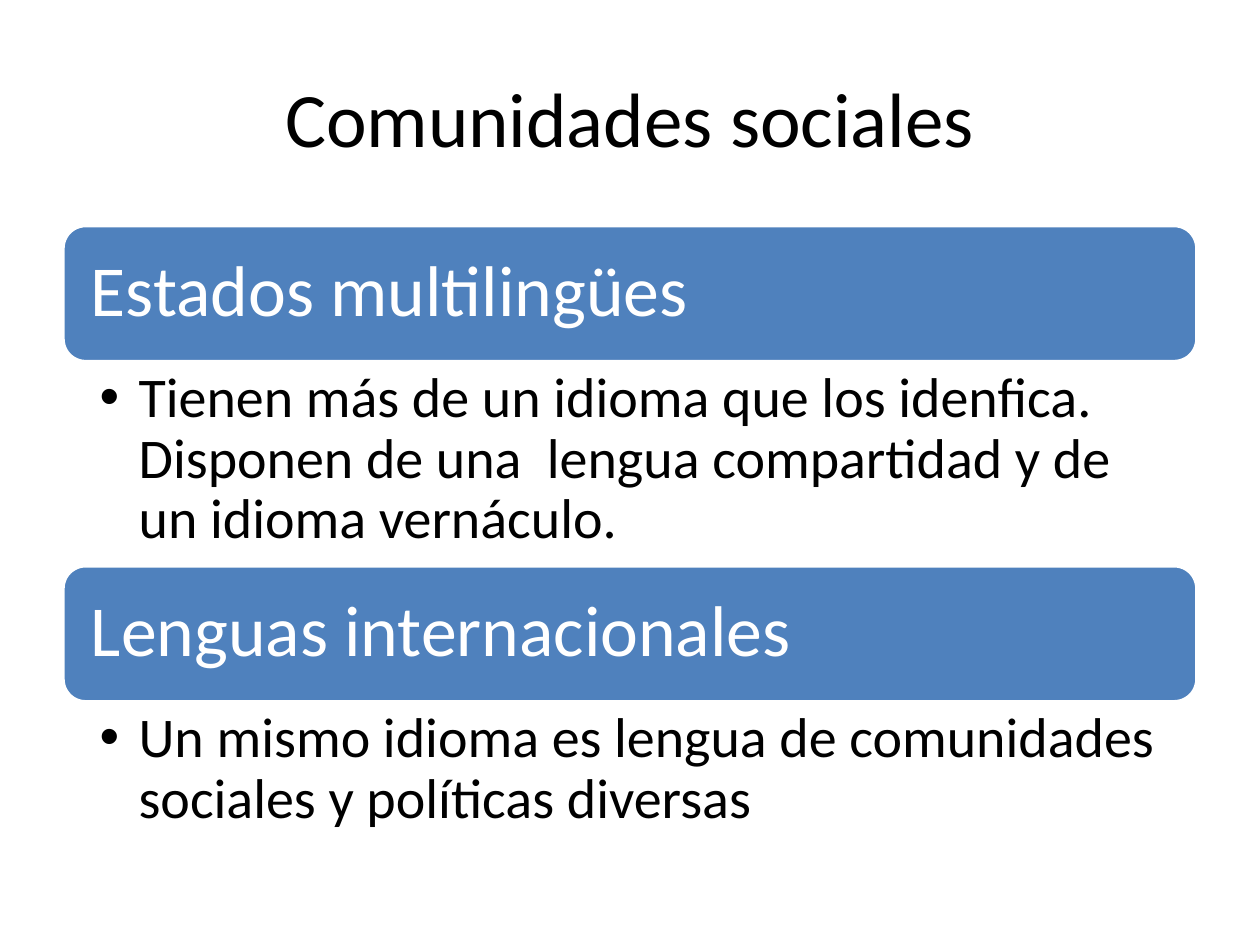
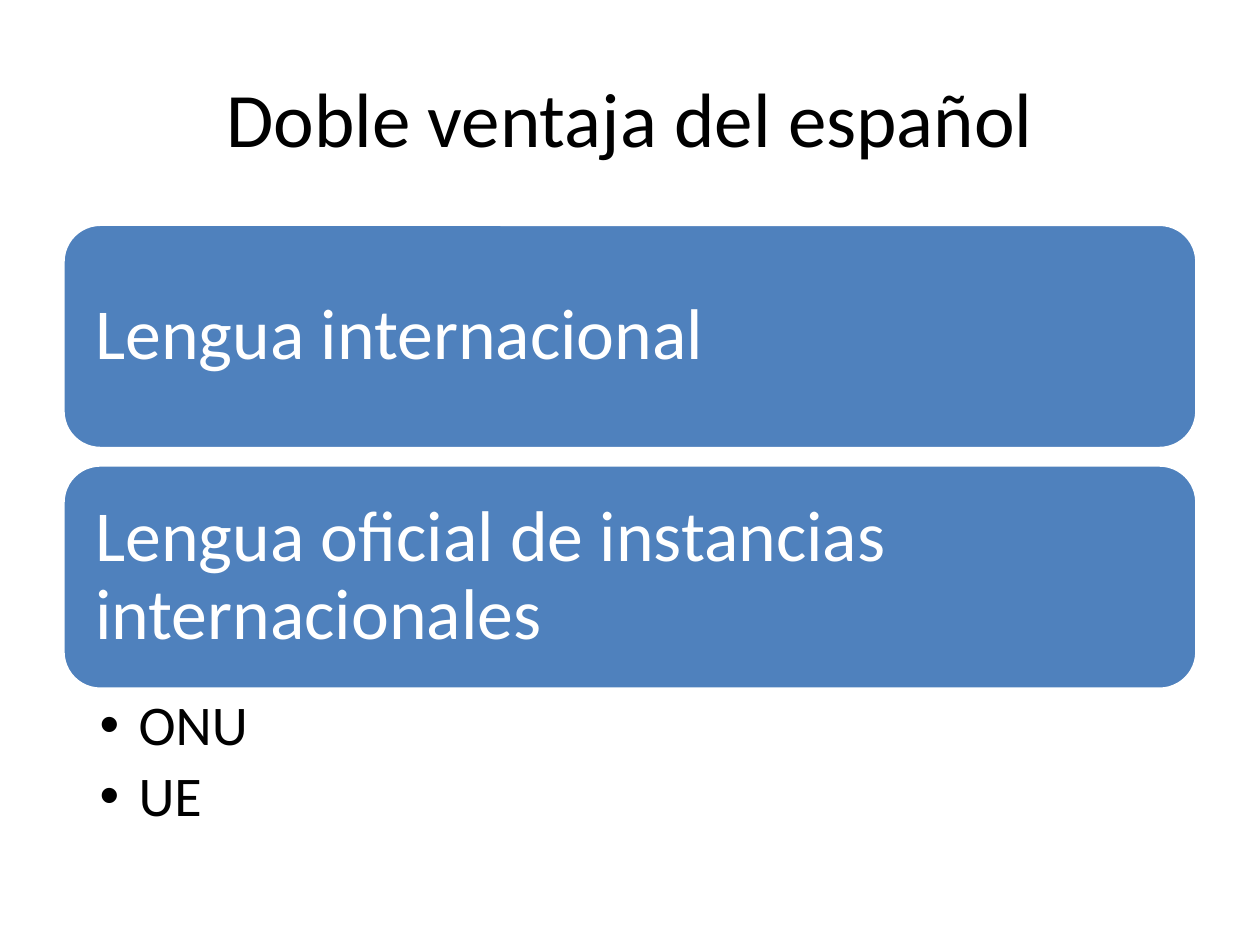
"""Build two slides of headed bands, each followed by an optional bullet list."""
from dataclasses import dataclass

import lxml.etree
import pptx
import pptx.dml.color
import pptx.enum.shapes
import pptx.enum.text
import pptx.oxml.ns
import pptx.util

Inches = pptx.util.Inches
Align = pptx.enum.text.PP_ALIGN
Anchor = pptx.enum.text.MSO_ANCHOR


@dataclass(frozen=True)
class Theme:
    """Hold the shared colours, type sizes and measures."""
    font: str = "Calibri"
    ink: str = "000000"
    paper: str = "FFFFFF"
    band: str = "4F81BD"
    title_size: int = 44
    heading_size: int = 41
    list_size: int = 32
    line_spacing: float = 0.9
    item_gap: float = 6.4
    left: float = 0.5
    width: float = 9


@dataclass(frozen=True)
class Section:
    """Describe one band heading and the list or gap below it."""
    heading: str
    space_below: float = 0
    items: tuple[str, ...] = ()


@dataclass(frozen=True)
class Topic:
    """Describe one slide."""
    title: str
    layout: int
    top: float
    band_height: float
    sections: tuple[Section, ...]


THEME = Theme()
TITLE_AND_CONTENT, TWO_CONTENT = 1, 3
TOPICS = (
    Topic("Comunidades sociales", TWO_CONTENT, 1.79, 1.08, (
        Section("Estados multilingües", 1.62, (
            "Tienen más de un idioma que los idenfica. Disponen de una  lengua "
            "compartidad y de un idioma vernáculo.",)),
        Section("Lenguas internacionales", 1.09, (
            "Un mismo idioma es lengua de comunidades sociales y políticas diversas",)),
    )),
    Topic("Doble ventaja del español", TITLE_AND_CONTENT, 1.78, 1.78, (
        Section("Lengua internacional", 0.13),
        Section("Lengua oficial de instancias internacionales", 1.21, ("ONU", "UE")),
    )),
)


def colour(code: str) -> pptx.dml.color.RGBColor:
    """Turn a hex code into a colour."""
    return pptx.dml.color.RGBColor.from_string(code)


def place(shape, top: float, height: float) -> None:
    """Set a shape in the shared column."""
    shape.left, shape.width = Inches(THEME.left), Inches(THEME.width)
    shape.top, shape.height = Inches(top), Inches(height)


def set_frame(frame, anchor, margins: tuple[float, float, float, float]) -> None:
    """Set wrapping, anchor and left, top, right and bottom margins."""
    frame.word_wrap = True
    frame.auto_size = pptx.enum.text.MSO_AUTO_SIZE.NONE
    frame.vertical_anchor = anchor
    frame.margin_left, frame.margin_top, frame.margin_right, frame.margin_bottom = map(Inches, margins)


def write(para, text: str, *, size: int, ink: str = THEME.ink, align=Align.LEFT,
          spacing: float = THEME.line_spacing, after: float = 0) -> None:
    """Write formatted text into a paragraph."""
    para.alignment, para.line_spacing = align, spacing
    para.space_before, para.space_after = pptx.util.Pt(0), pptx.util.Pt(after)
    span = para.add_run()
    span.text = text
    span.font.name, span.font.size = THEME.font, pptx.util.Pt(size)
    span.font.color.rgb = colour(ink)


def add_bullet(para) -> None:
    """Give a paragraph a round bullet and a hanging indent."""
    para.level = 1
    properties = para._p.get_or_add_pPr()
    properties.set("marL", str(Inches(0.31)))
    properties.set("indent", str(-Inches(0.31)))
    bullet = lxml.etree.SubElement(properties, pptx.oxml.ns.qn("a:buChar"))
    bullet.set("char", "•")


def draw_band(page, text: str, top: float, height: float) -> None:
    """Draw a rounded heading band."""
    band = page.shapes.add_shape(pptx.enum.shapes.MSO_SHAPE.ROUNDED_RECTANGLE, 0, 0, 0, 0)
    place(band, top, height)
    band.shadow.inherit = False
    band.fill.solid()
    band.fill.fore_color.rgb = colour(THEME.band)
    band.line.color.rgb = colour(THEME.paper)
    band.line.width = pptx.util.Pt(2)
    set_frame(band.text_frame, Anchor.MIDDLE, (0.17, 0.17, 0.17, 0.17))
    write(band.text_frame.paragraphs[0], text, size=THEME.heading_size, ink=THEME.paper)


def fill_list(body, items: tuple[str, ...], top: float, height: float) -> None:
    """Fill a body placeholder with a bullet list."""
    place(body, top, height)
    frame = body.text_frame
    set_frame(frame, Anchor.TOP, (0.29, 0.06, 0.32, 0.06))
    for index, item in enumerate(items):
        para = frame.add_paragraph() if index else frame.paragraphs[0]
        write(para, item, size=THEME.list_size, after=THEME.item_gap)
        add_bullet(para)


def build_page(deck, topic: Topic) -> None:
    """Add one slide, stacking its sections downwards."""
    page = deck.slides.add_slide(deck.slide_layouts[topic.layout])
    title, *bodies = page.placeholders
    place(title, 0.3, 1.25)
    set_frame(title.text_frame, Anchor.MIDDLE, (0.1, 0.05, 0.1, 0.05))
    write(title.text_frame.paragraphs[0], topic.title, size=THEME.title_size,
          align=Align.CENTER, spacing=1.0)
    remaining = iter(bodies)
    top = topic.top
    for section in topic.sections:
        draw_band(page, section.heading, top, topic.band_height)
        top += topic.band_height
        if section.items:
            fill_list(next(remaining), section.items, top, section.space_below)
        top += section.space_below


def main() -> None:
    """Build and save the deck."""
    deck = pptx.Presentation()
    deck.slide_width, deck.slide_height = Inches(10), Inches(7.5)
    for topic in TOPICS:
        build_page(deck, topic)
    deck.save("out.pptx")


if __name__ == "__main__":
    main()
